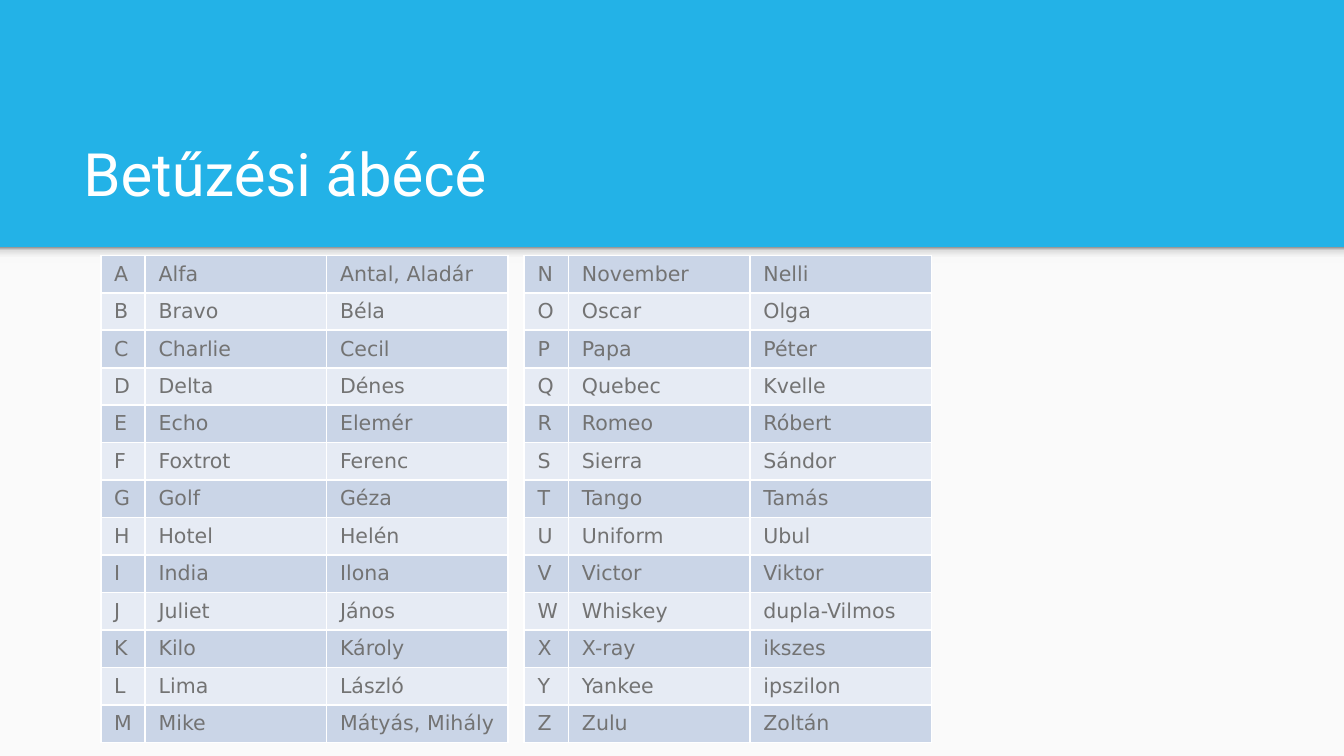
from lxml.etree import SubElement
from pptx import Presentation
from pptx.dml.color import RGBColor
from pptx.enum.shapes import MSO_SHAPE
from pptx.enum.text import MSO_ANCHOR, PP_ALIGN
from pptx.oxml.ns import qn
from pptx.util import Inches, Pt

TITLE = "Betűzési ábécé"
ALPHABET = [
    ("A", "Alfa", "Antal, Aladár"),
    ("B", "Bravo", "Béla"),
    ("C", "Charlie", "Cecil"),
    ("D", "Delta", "Dénes"),
    ("E", "Echo", "Elemér"),
    ("F", "Foxtrot", "Ferenc"),
    ("G", "Golf", "Géza"),
    ("H", "Hotel", "Helén"),
    ("I", "India", "Ilona"),
    ("J", "Juliet", "János"),
    ("K", "Kilo", "Károly"),
    ("L", "Lima", "László"),
    ("M", "Mike", "Mátyás, Mihály"),
    ("N", "November", "Nelli"),
    ("O", "Oscar", "Olga"),
    ("P", "Papa", "Péter"),
    ("Q", "Quebec", "Kvelle"),
    ("R", "Romeo", "Róbert"),
    ("S", "Sierra", "Sándor"),
    ("T", "Tango", "Tamás"),
    ("U", "Uniform", "Ubul"),
    ("V", "Victor", "Viktor"),
    ("W", "Whiskey", "dupla-Vilmos"),
    ("X", "X-ray", "ikszes"),
    ("Y", "Yankee", "ipszilon"),
    ("Z", "Zulu", "Zoltán"),
]

BLUE = RGBColor(0x23, 0xB2, 0xE7)
PAPER = RGBColor(0xFA, 0xFA, 0xFA)
WHITE = RGBColor(0xFF, 0xFF, 0xFF)
GREY = RGBColor(0x73, 0x73, 0x73)
BANDS = [RGBColor(0xCA, 0xD5, 0xE7), RGBColor(0xE6, 0xEB, 0xF4)]
SHADE_STOPS = [
    (0, RGBColor(0xF9, 0xF9, 0xF9)),
    (36, RGBColor(0xF9, 0xF9, 0xF9)),
    (80, RGBColor(0xDE, 0xDE, 0xDE)),
    (100, RGBColor(0x99, 0x99, 0x99)),
]

SLIDE_WIDTH = Inches(10)
SLIDE_HEIGHT = SLIDE_WIDTH * 9 // 16
HEADER_HEIGHT = Inches(1.84)
TABLE_TOP = 1.9
TABLE_HEIGHT = 3.68
TABLE_LEFTS = [0.75, 3.9]
COLUMN_WIDTHS = [0.33, 1.35, 1.35]
ROW_HEIGHT = 0.18


def style_font(font, name, size, color):
    font.name = name
    font.size = Pt(size)
    font.color.rgb = color


def add_band(s, height):
    sp = s.shapes.add_shape(MSO_SHAPE.RECTANGLE, 0, HEADER_HEIGHT, SLIDE_WIDTH, height)
    sp.shadow.inherit = False
    sp.line.fill.background()
    return sp


def shade_upwards(sp, stops):
    sp.fill.gradient()
    sp.fill.gradient_angle = 90
    stop_list = sp.fill._fill._gradFill.find(qn("a:gsLst"))
    for stop in list(stop_list):
        stop_list.remove(stop)
    for percent, color in stops:
        stop = SubElement(stop_list, qn("a:gs"), pos=str(percent * 1000))
        SubElement(stop, qn("a:srgbClr"), val=str(color))


def add_borders(cell):
    tc_pr = cell._tc.get_or_add_tcPr()
    for side in ("a:lnL", "a:lnR", "a:lnT", "a:lnB"):
        line = SubElement(tc_pr, qn(side), w=str(Pt(1)))
        fill = SubElement(line, qn("a:solidFill"))
        SubElement(fill, qn("a:srgbClr"), val=str(WHITE))


def add_alphabet_table(s, left, rows):
    frame = s.shapes.add_table(
        len(rows), len(COLUMN_WIDTHS), Inches(left), Inches(TABLE_TOP),
        Inches(sum(COLUMN_WIDTHS)), Inches(TABLE_HEIGHT))
    table = frame.table
    table.first_row = False
    for column, width in zip(table.columns, COLUMN_WIDTHS):
        column.width = Inches(width)
    for i, row in enumerate(rows):
        table.rows[i].height = Inches(ROW_HEIGHT)
        for j, text in enumerate(row):
            cell = table.cell(i, j)
            add_borders(cell)
            cell.fill.solid()
            cell.fill.fore_color.rgb = BANDS[i % 2]
            cell.text_frame.text = text
            style_font(cell.text_frame.paragraphs[0].runs[0].font, "DejaVu Sans", 11, GREY)
    frame.height = Inches(TABLE_HEIGHT)


prs = Presentation()
prs.slide_width = SLIDE_WIDTH
prs.slide_height = SLIDE_HEIGHT
s = prs.slides.add_slide(prs.slide_layouts[5])
s.background.fill.solid()
s.background.fill.fore_color.rgb = BLUE

sheet = add_band(s, SLIDE_HEIGHT - HEADER_HEIGHT)
sheet.fill.solid()
sheet.fill.fore_color.rgb = PAPER
shade_upwards(add_band(s, Inches(0.12)), SHADE_STOPS)

title = s.shapes.title
title.left, title.top = Inches(0.52), Inches(0.81)
title.width, title.height = Inches(8.99), Inches(0.84)
tf = title.text_frame
tf.text = TITLE
tf.vertical_anchor = MSO_ANCHOR.BOTTOM
tf.margin_left = tf.margin_right = tf.margin_top = tf.margin_bottom = Inches(0.1)
p = tf.paragraphs[0]
p.alignment = PP_ALIGN.LEFT
style_font(p.runs[0].font, "Roboto", 32, WHITE)

half = len(ALPHABET) // 2
for left, rows in zip(TABLE_LEFTS, (ALPHABET[:half], ALPHABET[half:])):
    add_alphabet_table(s, left, rows)

prs.save("out.pptx")
